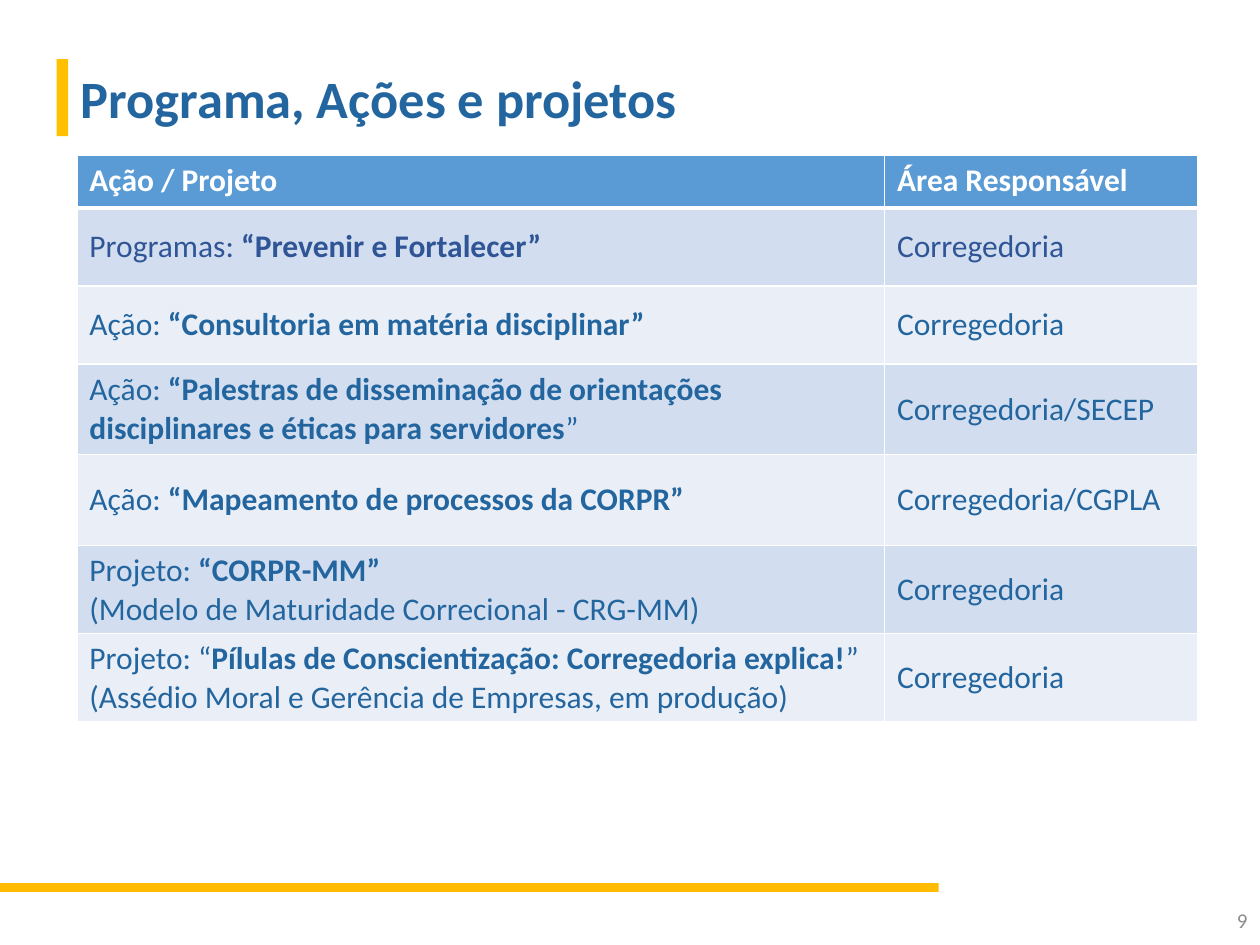
from lxml.etree import SubElement
from pptx import Presentation
from pptx.dml.color import RGBColor
from pptx.enum.shapes import MSO_SHAPE
from pptx.enum.text import MSO_ANCHOR, MSO_AUTO_SIZE, PP_ALIGN
from pptx.oxml.ns import qn
from pptx.util import Inches, Pt

BLUE, NAVY, WHITE = "23659E", "2F5597", "FFFFFF"
HEAD, BANDS = "5B9BD5", ("D2DEEF", "EAEFF7")
WIDTHS = (6.41, 2.49)
HEIGHTS = (0.42, 0.62, 0.62, 0.72, 0.72, 0.7, 0.7)
ROWS = (
    ([[("Programas:", False), (" “Prevenir e Fortalecer”", True)]], "Corregedoria"),
    ([[("Ação: ", False), ("“Consultoria em matéria disciplinar”", True)]], "Corregedoria"),
    ([[("Ação: ", False),
       ("“Palestras de disseminação de orientações disciplinares e éticas para servidores", True),
       ("”", False)]], "Corregedoria/SECEP"),
    ([[("Ação: ", False), ("“Mapeamento de processos da CORPR”", True)]], "Corregedoria/CGPLA"),
    ([[("Projeto: ", False), ("“CORPR-MM”", True)],
      [("(Modelo de Maturidade Correcional - CRG-MM)", False)]], "Corregedoria"),
    ([[("Projeto: “", False),
       ("Pílulas de Conscientização: Corregedoria explica!", True),
       ("” (Assédio Moral e Gerência de Empresas, em produção)", False)]], "Corregedoria"),
)


def paint(color, code):
    """Set a colour format from a hex string."""
    color.rgb = RGBColor.from_string(code)


def fill(item, code):
    """Fill a shape or cell with one colour."""
    item.fill.solid()
    paint(item.fill.fore_color, code)


def write(frame, paras, size, code):
    """Write paragraphs of (text, bold) runs into a text frame."""
    for i, runs in enumerate(paras):
        para = frame.add_paragraph() if i else frame.paragraphs[0]
        for text, bold in runs:
            run = para.add_run()
            run.text = text
            run.font.name = "Calibri"
            run.font.size = Pt(size)
            run.font.bold = bold
            paint(run.font.color, code)


def add_bar(slide, box, code):
    """Add a plain coloured bar."""
    bar = slide.shapes.add_shape(MSO_SHAPE.RECTANGLE, *map(Inches, box))
    bar.shadow.inherit = False
    fill(bar, code)
    bar.line.fill.background()


def add_title(slide, text):
    """Place and write the slide title."""
    title = slide.shapes.title
    title.left, title.top, title.width, title.height = map(Inches, (0.54, 0.47, 8.38, 0.61))
    frame = title.text_frame
    frame.word_wrap = True
    frame.auto_size = MSO_AUTO_SIZE.SHAPE_TO_FIT_TEXT
    frame.vertical_anchor = MSO_ANCHOR.TOP
    write(frame, [[(text, True)]], 30, BLUE)
    frame.paragraphs[0].alignment = PP_ALIGN.LEFT


def add_number(slide, text):
    """Add the page number at the lower right."""
    frame = slide.shapes.add_textbox(*map(Inches, (7.75, 7.1, 2.25, 0.4))).text_frame
    frame.word_wrap = True
    frame.vertical_anchor = MSO_ANCHOR.MIDDLE
    write(frame, [[(text, False)]], 12, "8C8C8C")
    frame.paragraphs[0].alignment = PP_ALIGN.RIGHT


def add_edges(cell, top, base):
    """Draw the white borders of a cell."""
    props = cell._tc.get_or_add_tcPr()
    for side, width in (("L", 1), ("R", 1), ("T", top), ("B", base)):
        line = SubElement(props, qn(f"a:ln{side}"), w=str(Pt(width)))
        solid = SubElement(line, qn("a:solidFill"))
        SubElement(solid, qn("a:srgbClr"), val=WHITE)


def set_cell(cell, paras, row):
    """Style and write one cell by its row."""
    add_edges(cell, 3 if row == 1 else 1, 1 if row else 3)
    fill(cell, BANDS[(row - 1) % 2] if row else HEAD)
    cell.vertical_anchor = MSO_ANCHOR.MIDDLE if row else MSO_ANCHOR.TOP
    code = {0: WHITE, 1: NAVY}.get(row, BLUE)
    write(cell.text_frame, paras, 18, code)


def add_grid(slide):
    """Add the table of actions and areas."""
    box = map(Inches, (0.61, 1.23, sum(WIDTHS), sum(HEIGHTS)))
    table = slide.shapes.add_table(len(HEIGHTS), len(WIDTHS), *box).table
    table.first_row = table.horz_banding = False
    for col, width in zip(table.columns, WIDTHS):
        col.width = Inches(width)
    for row, height in zip(table.rows, HEIGHTS):
        row.height = Inches(height)
    for col, text in enumerate(("Ação / Projeto", "Área Responsável")):
        set_cell(table.cell(0, col), [[(text, True)]], 0)
    for row, (paras, area) in enumerate(ROWS, 1):
        set_cell(table.cell(row, 0), paras, row)
        set_cell(table.cell(row, 1), [[(area, False)]], row)
    cell = table.cell(4, 0)
    cell.vertical_anchor = MSO_ANCHOR.TOP
    cell.text_frame.paragraphs[0].line_spacing = 1.5


def main():
    """Build and save the slide."""
    deck = Presentation()
    deck.slide_width, deck.slide_height = Inches(10), Inches(7.5)
    slide = deck.slides.add_slide(deck.slide_layouts[5])
    add_bar(slide, (0, 7.01, 7.45, 0.07), "FEBB00")
    add_title(slide, "Programa, Ações e projetos")
    add_bar(slide, (0.45, 0.47, 0.09, 0.61), "FFC000")
    add_number(slide, "9")
    add_grid(slide)
    deck.save("out.pptx")


if __name__ == "__main__":
    main()
